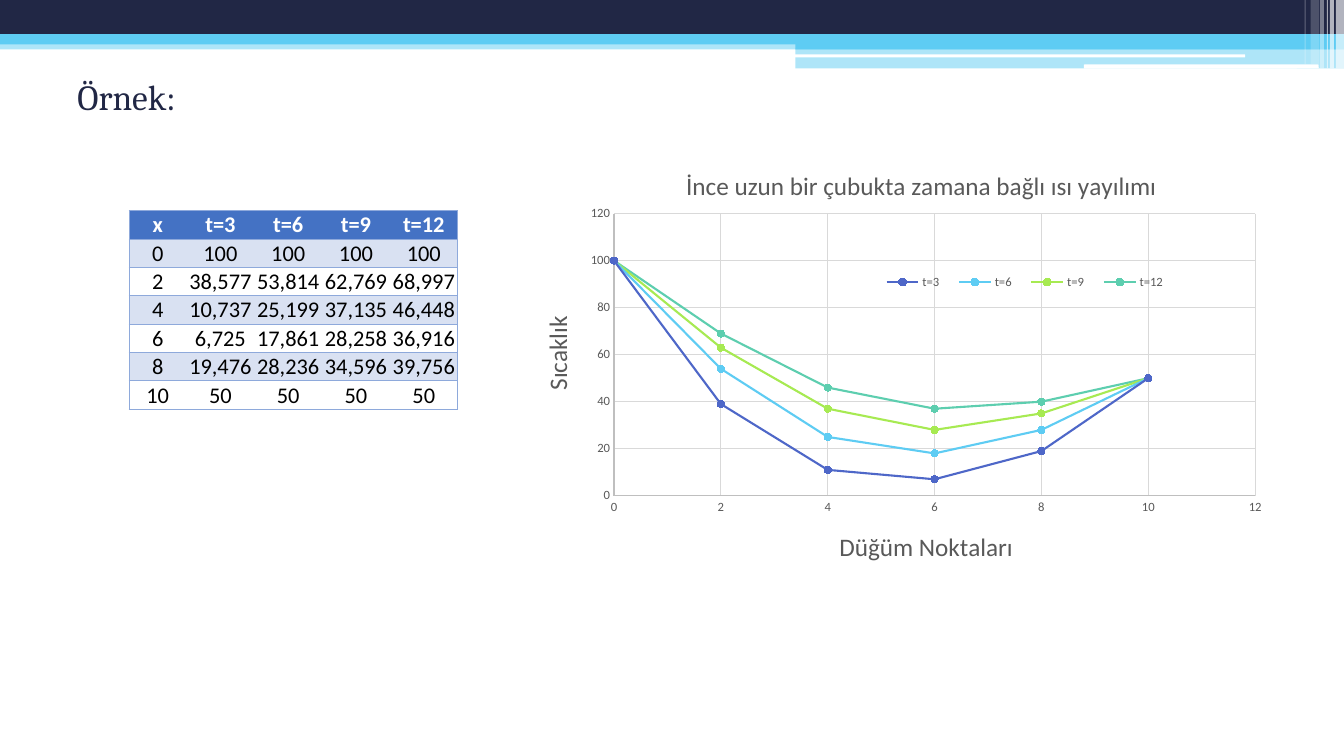
from lxml import etree
from pptx import Presentation
from pptx.chart.data import XyChartData
from pptx.dml.color import RGBColor
from pptx.enum.chart import XL_CHART_TYPE, XL_LEGEND_POSITION, XL_MARKER_STYLE, XL_TICK_MARK
from pptx.enum.shapes import MSO_SHAPE
from pptx.enum.text import MSO_ANCHOR, PP_ALIGN
from pptx.oxml.ns import qn
from pptx.util import Inches, Pt

RECT, ROUNDED = MSO_SHAPE.RECTANGLE, MSO_SHAPE.ROUNDED_RECTANGLE
CENTER, MIDDLE, BOTTOM = PP_ALIGN.CENTER, MSO_ANCHOR.MIDDLE, MSO_ANCHOR.BOTTOM
SCATTER, CIRCLE = XL_CHART_TYPE.XY_SCATTER_LINES, XL_MARKER_STYLE.CIRCLE
LEGEND_RIGHT, NO_TICK = XL_LEGEND_POSITION.RIGHT, XL_TICK_MARK.NONE

NAVY = RGBColor(0x21, 0x27, 0x45)
SKY = RGBColor(0x5E, 0xCC, 0xF3)
WHITE = RGBColor(0xFF, 0xFF, 0xFF)
BLACK = RGBColor(0, 0, 0)
HEADER_BLUE = RGBColor(0x44, 0x72, 0xC4)
BAND_BLUE = RGBColor(0xD9, 0xE1, 0xF2)
BORDER_BLUE = RGBColor(0x8E, 0xA9, 0xDB)
TEXT_GRAY = RGBColor(0x59, 0x59, 0x59)
AXIS_GRAY = RGBColor(0xBF, 0xBF, 0xBF)
GRID_GRAY = RGBColor(0xD9, 0xD9, 0xD9)
INDIGO = RGBColor(0x4E, 0x67, 0xC8)
LIME = RGBColor(0xA7, 0xEA, 0x52)
TEAL = RGBColor(0x5D, 0xCE, 0xAF)

CHART_WIDTH, CHART_HEIGHT = 7.36, 5.18
NODES = [0, 2, 4, 6, 8, 10]
TEMPERATURES = {
    "t=3": (INDIGO, [100, 38.577, 10.737, 6.725, 19.476, 50]),
    "t=6": (SKY, [100, 53.814, 25.199, 17.861, 28.236, 50]),
    "t=9": (LIME, [100, 62.769, 37.135, 28.258, 34.596, 50]),
    "t=12": (TEAL, [100, 68.997, 46.448, 36.916, 39.756, 50]),
}


def place(element, x, y, w=None, h=None, target=None):
    """Give a chart part a manual layout, in inches from the chart's corner."""
    for old in element.findall(qn("c:layout")):
        element.remove(old)
    layout = etree.Element(qn("c:layout"))
    manual = etree.SubElement(layout, qn("c:manualLayout"))
    settings = {"layoutTarget": target, "xMode": "edge", "yMode": "edge",
                "x": x / CHART_WIDTH, "y": y / CHART_HEIGHT,
                "w": w and w / CHART_WIDTH, "h": h and h / CHART_HEIGHT}
    for key, value in settings.items():
        if value is not None:
            etree.SubElement(manual, qn("c:" + key)).set("val", str(value))
    overlay = element.find(qn("c:overlay"))
    element.insert(0 if overlay is None else element.index(overlay), layout)


def write_title(title, text, x, y):
    title.text_frame.text = text
    font = title.text_frame.paragraphs[0].runs[0].font
    font.size, font.bold, font.name = Pt(18), False, "Calibri"
    font.color.rgb = TEXT_GRAY
    place(title._element, x, y)


prs = Presentation()
prs.slide_width, prs.slide_height = Inches(13.33), Inches(7.5)
slide = prs.slides.add_slide(prs.slide_layouts[6])

# Header bands and stripes: shape, left, top, width, height, colour, opacity %
HEADER = [
    (RECT, 0, 0.4, 13.33, 0.09, SKY, 50),
    (RECT, 0, 0, 13.33, 0.34, NAVY, 100),
    (RECT, 0, 0.34, 13.33, 0.1, SKY, 100),
    (RECT, 7.89, 0.39, 5.44, 0.1, SKY, 100),
    (RECT, 7.89, 0.48, 5.44, 0.2, SKY, 50),
    (ROUNDED, 7.88, 0.54, 4.47, 0.03, WHITE, 100),
    (ROUNDED, 10.75, 0.64, 2.33, 0.04, WHITE, 100),
    (RECT, 13.25, 0, 0.08, 0.68, WHITE, 65),
    (RECT, 13.19, 0, 0.04, 0.68, WHITE, 65),
    (RECT, 13.16, 0, 0.01, 0.68, WHITE, 60),
    (RECT, 13.09, 0, 0.04, 0.68, WHITE, 40),
    (RECT, 13, 0, 0.08, 0.64, WHITE, 20),
    (RECT, 12.94, 0, 0.01, 0.64, WHITE, 30),
]
for kind, left, top, width, height, color, opacity in HEADER:
    band = slide.shapes.add_shape(kind, Inches(left), Inches(top), Inches(width), Inches(height))
    band.shadow.inherit = False
    band.line.fill.background()
    band.fill.solid()
    band.fill.fore_color.rgb = color
    if opacity < 100:
        rgb = band._element.spPr.find(".//" + qn("a:srgbClr"))
        etree.SubElement(rgb, qn("a:alpha")).set("val", str(opacity * 1000))

heading = slide.shapes.add_textbox(Inches(0.67), Inches(0.68), Inches(12), Inches(0.55)).text_frame
heading.word_wrap = True
heading.vertical_anchor = MIDDLE
heading.text = "Örnek:"
heading_font = heading.paragraphs[0].runs[0].font
heading_font.size, heading_font.name = Pt(25.2), "Cambria"
heading_font.color.rgb = NAVY

# Temperature table
rows = [["x", *TEMPERATURES]]
for i, node in enumerate(NODES):
    readings = [values[i] for _, values in TEMPERATURES.values()]
    rows.append([str(node)] + [str(reading).replace(".", ",") for reading in readings])
last_column = len(rows[0]) - 1
table_width, table_height, node_width = 3.26, 1.97, 0.57
table = slide.shapes.add_table(len(rows), len(rows[0]), Inches(1.28), Inches(2.09),
                               Inches(table_width), Inches(table_height)).table
table.first_row = table.horz_banding = False
NO_STYLE = "{2D5ABB26-0587-4C30-8999-92F81FD0307C}"
table._tbl.tblPr.find(qn("a:tableStyleId")).text = NO_STYLE
for c, column in enumerate(table.columns):
    column.width = Inches((table_width - node_width) / last_column if c else node_width)
for r, row in enumerate(rows):
    table.rows[r].height = Inches(table_height / len(rows))
    for c, text in enumerate(row):
        cell = table.cell(r, c)
        cell.margin_left = cell.margin_right = cell.margin_top = Inches(0.01)
        cell.margin_bottom = 0
        cell.vertical_anchor = BOTTOM
        cell.text = text
        paragraph = cell.text_frame.paragraphs[0]
        paragraph.alignment = CENTER
        font = paragraph.runs[0].font
        font.size, font.name, font.bold = Pt(16), "Calibri", r == 0
        font.color.rgb = BLACK if r else WHITE
        edges = {"a:lnL": c == 0, "a:lnR": c == last_column, "a:lnT": True, "a:lnB": True}
        for tag, visible in edges.items():
            border = etree.SubElement(cell._tc.get_or_add_tcPr(), qn(tag), w=str(Pt(0.5)))
            if visible:
                fill = etree.SubElement(border, qn("a:solidFill"))
                etree.SubElement(fill, qn("a:srgbClr")).set("val", str(BORDER_BLUE))
            else:
                etree.SubElement(border, qn("a:noFill"))
        if r and r % 2 == 0:
            cell.fill.background()
        else:
            cell.fill.solid()
            cell.fill.fore_color.rgb = BAND_BLUE if r else HEADER_BLUE

# Temperature chart
chart_data = XyChartData()
for name, (_, values) in TEMPERATURES.items():
    points = chart_data.add_series(name)
    for node, value in zip(NODES, values):
        points.add_data_point(node, round(value))
chart = slide.shapes.add_chart(SCATTER, Inches(5.31), Inches(1.23), Inches(CHART_WIDTH),
                               Inches(CHART_HEIGHT), chart_data).chart
chart.font.size, chart.font.name = Pt(10), "Calibri"
chart.font.color.rgb = BLACK
chart.plots[0].vary_by_categories = False
for series, (color, _) in zip(chart.plots[0].series, TEMPERATURES.values()):
    series.smooth = False
    series.format.line.width = Pt(1.5)
    series.format.line.color.rgb = color
    series.marker.style, series.marker.size = CIRCLE, 5
    series.marker.format.fill.solid()
    series.marker.format.fill.fore_color.rgb = color
    series.marker.format.line.color.rgb = color

chart.has_title = True
write_title(chart.chart_title, "İnce uzun bir çubukta zamana bağlı ısı yayılımı", 1.45, 0.39)
AXES = [
    (chart.category_axis, 12, 2, "Düğüm Noktaları", 2.97, 3.98),
    (chart.value_axis, 120, 20, "Sıcaklık", 0, 1.86),
]
for axis, maximum, step, text, x, y in AXES:
    axis.minimum_scale, axis.maximum_scale, axis.major_unit = 0, maximum, step
    axis.major_tick_mark = axis.minor_tick_mark = NO_TICK
    axis.has_major_gridlines = True
    for line, color in ((axis.format.line, AXIS_GRAY), (axis.major_gridlines.format.line, GRID_GRAY)):
        line.width = Pt(0.75)
        line.color.rgb = color
    axis.tick_labels.font.size, axis.tick_labels.font.name = Pt(9), "Calibri"
    axis.tick_labels.font.color.rgb = TEXT_GRAY
    write_title(axis.axis_title, text, x, y)
rotation = chart.value_axis.axis_title._element.find(".//" + qn("a:bodyPr"))
rotation.set("rot", "-5400000")
rotation.set("vert", "horz")

chart.has_legend = True
chart.legend.position = LEGEND_RIGHT
chart.legend.include_in_layout = False
chart.legend.font.size, chart.legend.font.name = Pt(9), "Calibri"
chart.legend.font.color.rgb = TEXT_GRAY
place(chart.legend._element, 3.33, 1.44, 3.05, 0.26)
place(chart._chartSpace.chart.plotArea, 0.78, 0.89, 6.36, 2.8, target="inner")

prs.save("out.pptx")
